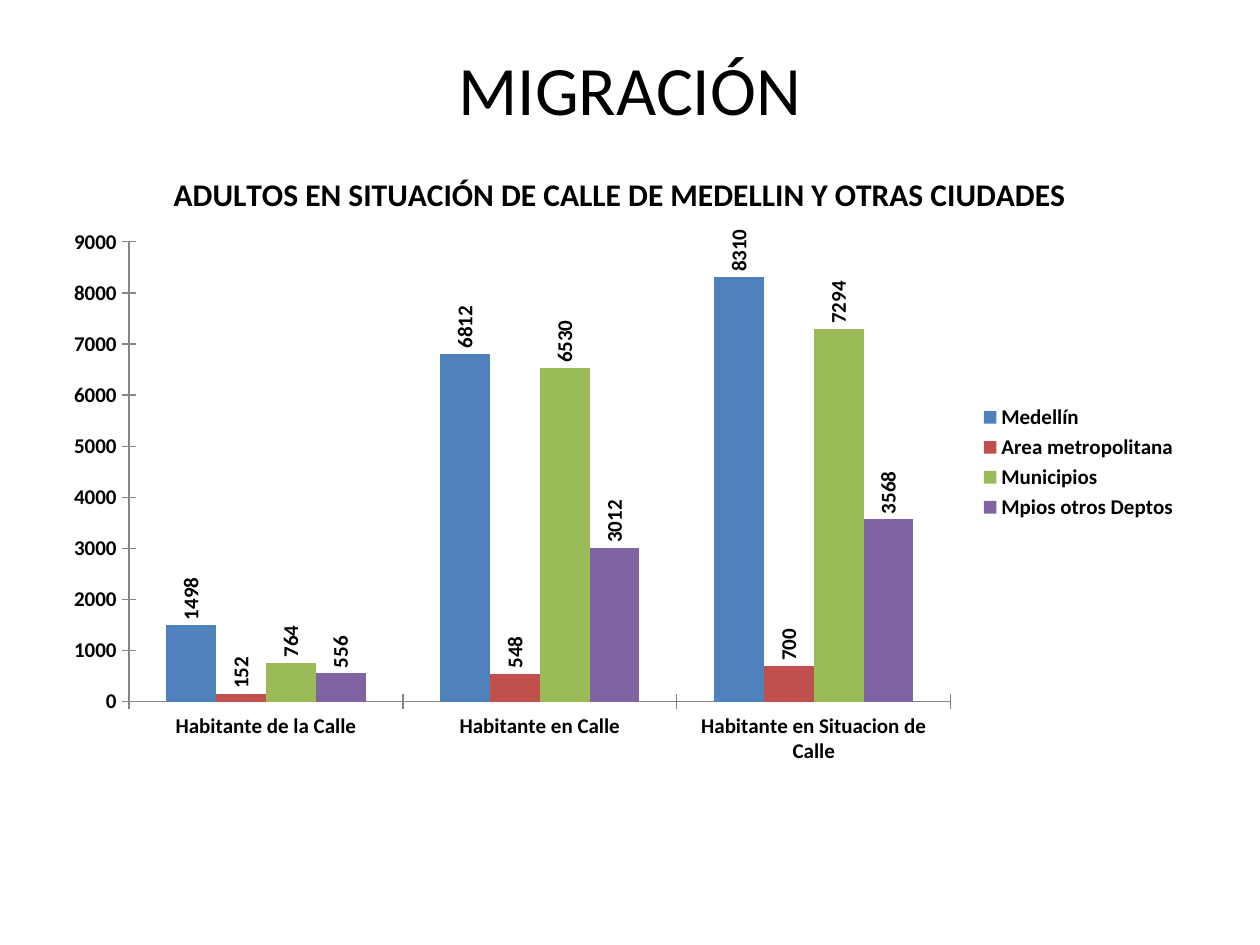
from lxml import etree
from pptx import Presentation
from pptx.chart.data import CategoryChartData
from pptx.dml.color import RGBColor
from pptx.enum import chart as ch, text
from pptx.oxml.ns import qn
from pptx.util import Cm, Pt

FONT = "Calibri"
BLACK = RGBColor(0x00, 0x00, 0x00)
AXIS_GREY = RGBColor(0x86, 0x86, 0x86)
BLUE = RGBColor(0x4F, 0x81, 0xBD)
RED = RGBColor(0xC0, 0x50, 0x4D)
GREEN = RGBColor(0x9B, 0xBB, 0x59)
PURPLE = RGBColor(0x80, 0x64, 0xA2)

CATEGORIES = ["Habitante de la Calle", "Habitante en Calle",
              "Habitante en Situacion de Calle"]
ORIGINS = [
    ("Medellín", (1498, 6812, 8310), BLUE),
    ("Area metropolitana", (152, 548, 700), RED),
    ("Municipios", (764, 6530, 7294), GREEN),
    ("Mpios otros Deptos", (556, 3012, 3568), PURPLE),
]


def style_font(font, size, bold):
    font.name = FONT
    font.size = Pt(size)
    font.bold = bold
    font.color.rgb = BLACK


def place_title(slide, left, top, width, height):
    title = slide.shapes.title
    title.left, title.top, title.width, title.height = left, top, width, height
    tf = title.text_frame
    tf.text = "MIGRACIÓN"
    tf.vertical_anchor = text.MSO_ANCHOR.MIDDLE
    p = tf.paragraphs[0]
    p.alignment = text.PP_ALIGN.CENTER
    style_font(p.runs[0].font, 39.6, False)


def set_plot_layout(chart, **fractions):
    """Fix the inner plot area as fractions of the chart box."""
    plot_area = chart.plots[0]._element.getparent()
    layout = plot_area.find(qn("c:layout"))
    if layout is None:
        layout = etree.Element(qn("c:layout"))
        plot_area.insert(0, layout)
    manual = etree.SubElement(layout, qn("c:manualLayout"))
    settings = {"layoutTarget": "inner", "xMode": "edge", "yMode": "edge", **fractions}
    for name, value in settings.items():
        etree.SubElement(manual, qn(f"c:{name}")).set("val", str(value))


def style_axes(chart):
    for axis in (chart.category_axis, chart.value_axis):
        axis.has_major_gridlines = False
        axis.major_tick_mark = ch.XL_TICK_MARK.CROSS
        axis.format.line.color.rgb = AXIS_GREY
        style_font(axis.tick_labels.font, 12, True)
    chart.value_axis.minimum_scale = 0
    chart.value_axis.maximum_scale = 9000
    chart.value_axis.major_unit = 1000


def style_series(series, color):
    series.format.fill.solid()
    series.format.fill.fore_color.rgb = color
    labels = series.data_labels
    labels.show_value = True
    labels.position = ch.XL_LABEL_POSITION.OUTSIDE_END
    style_font(labels.font, 12, True)
    body = labels._element.find(qn("c:txPr")).find(qn("a:bodyPr"))
    body.set("rot", "-5400000")
    body.set("vert", "horz")


def place_chart(slide, left, top, width, height):
    data = CategoryChartData()
    data.categories = CATEGORIES
    for name, values, _ in ORIGINS:
        data.add_series(name, values)
    chart = slide.shapes.add_chart(ch.XL_CHART_TYPE.COLUMN_CLUSTERED,
                                   left, top, width, height, data).chart
    style_font(chart.font, 12, True)

    chart.has_title = True
    tf = chart.chart_title.text_frame
    tf.text = "ADULTOS EN SITUACIÓN DE CALLE DE MEDELLIN Y OTRAS CIUDADES"
    style_font(tf.paragraphs[0].runs[0].font, 18, True)
    chart.chart_title.include_in_layout = False

    chart.has_legend = True
    chart.legend.position = ch.XL_LEGEND_POSITION.RIGHT
    chart.legend.include_in_layout = False
    style_font(chart.legend.font, 12, True)

    plot = chart.plots[0]
    plot.gap_width = 150
    plot.overlap = 0
    plot.vary_by_categories = False
    for series, (_, _, color) in zip(plot.series, ORIGINS):
        style_series(series, color)
    style_axes(chart)
    set_plot_layout(chart, x=0.07, y=0.15, w=0.72, h=0.73)


def main():
    prs = Presentation()
    prs.slide_width, prs.slide_height = Cm(25.4), Cm(19.05)
    slide = prs.slides.add_slide(prs.slide_layouts.get_by_name("Title Only"))
    place_chart(slide, Cm(0.99), Cm(2.97), Cm(23.01), Cm(12.7))
    place_title(slide, Cm(1.27), Cm(0.76), Cm(22.86), Cm(2))
    prs.save("out.pptx")


if __name__ == "__main__":
    main()
